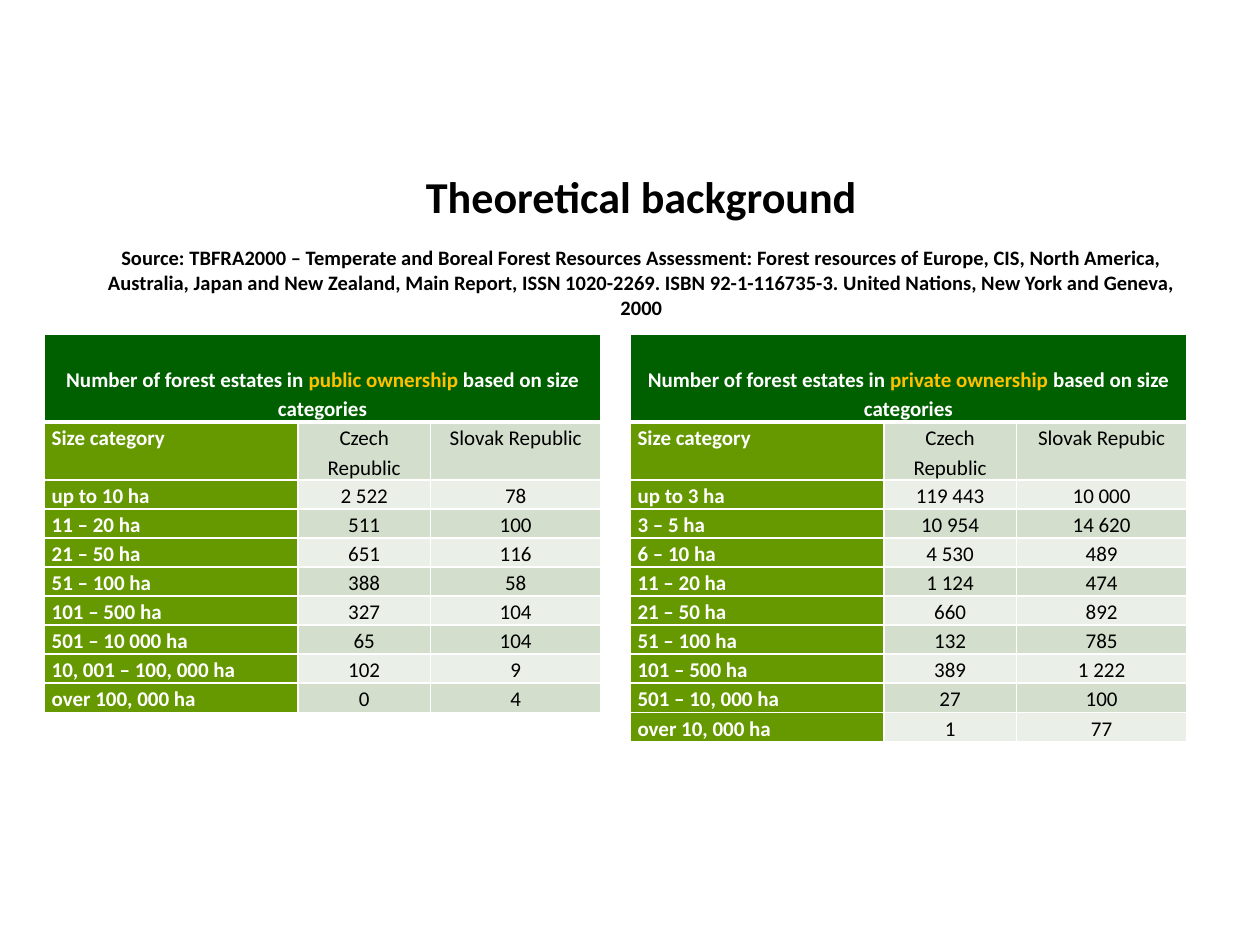
from dataclasses import dataclass

from lxml.etree import SubElement
from pptx import Presentation
from pptx.dml.color import RGBColor
from pptx.enum.text import MSO_ANCHOR, PP_ALIGN
from pptx.oxml.ns import qn
from pptx.util import Inches, Pt


@dataclass(frozen=True)
class Theme:
    """Colours, font and type sizes of the slide."""
    font: str = "Calibri"
    black: str = "000000"
    white: str = "FFFFFF"
    accent: str = "FFC000"
    header: str = "006000"
    label: str = "669900"
    bands: tuple = ("D3DECC", "EAEFE7")
    title_size: float = 25.2
    source_size: float = 11.7
    table_size: float = 12
    line_spacing: float = 1.15
    border: float = 1
    header_border: float = 3


THEME = Theme()
COLUMN_WIDTHS = (2.01, 1.05, 1.35)
HEADER_HEIGHT = 0.7
ROW_HEIGHT = 0.23
TITLE = "Theoretical background"
SOURCE = (
    "Source: TBFRA2000 – Temperate and Boreal Forest Resources Assessment: "
    "Forest resources of Europe, CIS, North America, Australia, Japan and New Zealand, "
    "Main Report, ISSN 1020-2269. ISBN 92-1-116735-3. "
    "United Nations, New York and Geneva, 2000"
)
PUBLIC_ROWS = (
    ("Size category", "Czech Republic", "Slovak Republic"),
    ("up to 10 ha", "2 522", "78"),
    ("11 – 20 ha", "511", "100"),
    ("21 – 50 ha", "651", "116"),
    ("51 – 100 ha", "388", "58"),
    ("101 – 500 ha", "327", "104"),
    ("501 – 10 000 ha", "65", "104"),
    ("10, 001 – 100, 000 ha", "102", "9"),
    ("over 100, 000 ha", "0", "4"),
)
PRIVATE_ROWS = (
    ("Size category", "Czech Republic", "Slovak Repubic"),
    ("up to 3 ha", "119 443", "10 000"),
    ("3 – 5 ha", "10 954", "14 620"),
    ("6 – 10 ha", "4 530", "489"),
    ("11 – 20 ha", "1 124", "474"),
    ("21 – 50 ha", "660", "892"),
    ("51 – 100 ha", "132", "785"),
    ("101 – 500 ha", "389", "1 222"),
    ("501 – 10, 000 ha", "27", "100"),
    ("over 10, 000 ha", "1", "77"),
)


def add_span(para, text, size, color, bold=True):
    """Add one formatted run to a paragraph."""
    span = para.add_run()
    span.text = text
    span.font.name = THEME.font
    span.font.size = Pt(size)
    span.font.bold = bold
    span.font.color.rgb = RGBColor.from_string(color)


def add_heading(page, left, top, width, height):
    """Place the title and the source beneath it."""
    box = page.shapes.add_textbox(Inches(left), Inches(top), Inches(width), Inches(height))
    frame = box.text_frame
    frame.word_wrap = True
    frame.vertical_anchor = MSO_ANCHOR.MIDDLE
    title = frame.paragraphs[0]
    title.alignment = PP_ALIGN.CENTER
    add_span(title, TITLE, THEME.title_size, THEME.black)
    source = frame.add_paragraph()
    source.alignment = PP_ALIGN.CENTER
    source.space_before = Pt(13)
    add_span(source, SOURCE, THEME.source_size, THEME.black)


def style_cell(cell, fill, top=THEME.border, bottom=THEME.border):
    """Set the margins, white borders and fill of a cell."""
    cell.margin_left = cell.margin_right = Inches(0.06)
    cell.margin_top = cell.margin_bottom = 0
    properties = cell._tc.get_or_add_tcPr()
    sides = {"L": THEME.border, "R": THEME.border, "T": top, "B": bottom}
    for side, width in sides.items():
        line = SubElement(properties, qn(f"a:ln{side}"), w=str(Pt(width)))
        paint = SubElement(line, qn("a:solidFill"))
        SubElement(paint, qn("a:srgbClr"), val=THEME.white)
    cell.fill.solid()
    cell.fill.fore_color.rgb = RGBColor.from_string(fill)


def write_cell(cell, spans, alignment, bold):
    """Write coloured pieces of text into a cell."""
    para = cell.text_frame.paragraphs[0]
    para.alignment = alignment
    para.line_spacing = THEME.line_spacing
    for text, color in spans:
        add_span(para, text, THEME.table_size, color, bold)


def add_estate_table(page, left, top, width, ownership, rows):
    """Place a table of forest estates for one kind of ownership."""
    height = HEADER_HEIGHT + ROW_HEIGHT * len(rows)
    table = page.shapes.add_table(
        len(rows) + 1, len(COLUMN_WIDTHS),
        Inches(left), Inches(top), Inches(width), Inches(height),
    ).table
    table.first_row = table.horz_banding = False
    for column, share in zip(table.columns, COLUMN_WIDTHS):
        column.width = Inches(width * share / sum(COLUMN_WIDTHS))
    for row in table.rows:
        row.height = Inches(ROW_HEIGHT)
    table.rows[0].height = Inches(HEADER_HEIGHT)

    for cell in table.rows[0].cells:
        style_cell(cell, THEME.header, bottom=THEME.header_border)
    header = table.cell(0, 0)
    header.merge(table.cell(0, len(COLUMN_WIDTHS) - 1))
    header.vertical_anchor = MSO_ANCHOR.BOTTOM
    spans = (
        ("Number of forest estates in ", THEME.white),
        (f"{ownership} ownership ", THEME.accent),
        ("based on size categories", THEME.white),
    )
    write_cell(header, spans, PP_ALIGN.CENTER, True)

    for index, values in enumerate(rows):
        border = THEME.border if index else THEME.header_border
        for column, text in enumerate(values):
            cell = table.cell(index + 1, column)
            is_label = column == 0
            fill = THEME.label if is_label else THEME.bands[index % 2]
            color = THEME.white if is_label else THEME.black
            alignment = PP_ALIGN.LEFT if is_label else PP_ALIGN.CENTER
            style_cell(cell, fill, top=border)
            write_cell(cell, [(text, color)], alignment, is_label)


def main():
    """Build the slide and save the deck."""
    deck = Presentation()
    deck.slide_width, deck.slide_height = Inches(10), Inches(7.5)
    page = deck.slides.add_slide(deck.slide_layouts[6])
    add_heading(page, 0.59, 1.39, 9, 1.1)
    add_estate_table(page, 0.35, 2.65, 4.42, "public", PUBLIC_ROWS)
    add_estate_table(page, 5, 2.65, 4.42, "private", PRIVATE_ROWS)
    deck.save("out.pptx")


if __name__ == "__main__":
    main()
